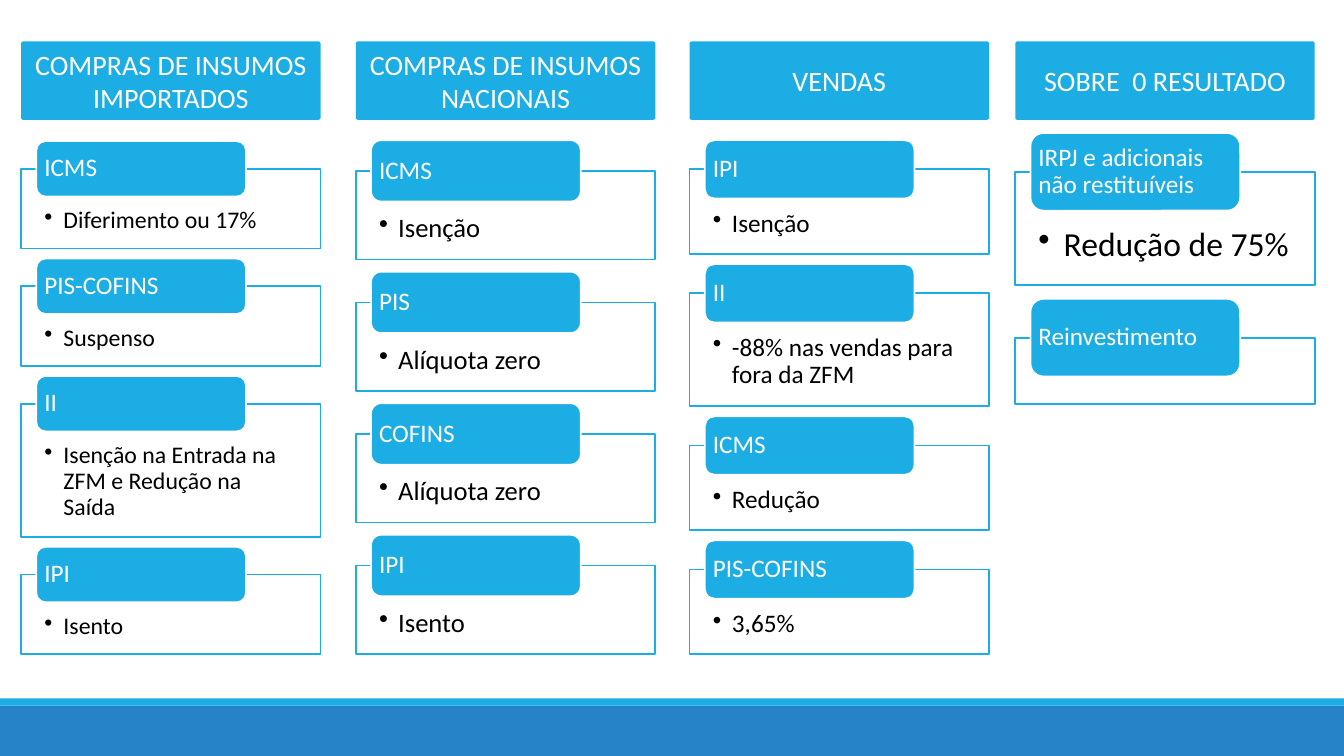
import pptx
import pptx.dml.color
import pptx.enum.shapes
import pptx.enum.text
import pptx.oxml.ns
import pptx.util
from lxml import etree

Inches = pptx.util.Inches
Pt = pptx.util.Pt
RGBColor = pptx.dml.color.RGBColor
MSO_SHAPE = pptx.enum.shapes.MSO_SHAPE
MSO_ANCHOR = pptx.enum.text.MSO_ANCHOR
PP_ALIGN = pptx.enum.text.PP_ALIGN
qn = pptx.oxml.ns.qn

SKY = RGBColor(0x1C, 0xAD, 0xE4)
BLUE = RGBColor(0x26, 0x83, 0xC6)
WHITE = RGBColor(0xFF, 0xFF, 0xFF)
BLACK = RGBColor(0, 0, 0)

FONT = "Calibri"
COLUMN_WIDTH = 2.97
TAB_WIDTH = 2.08
TAB_OFFSET = 0.15

# Each tax: tab label, box height, bullet text
COLUMNS = [
    dict(title="COMPRAS DE INSUMOS IMPORTADOS", left=0.21, top=1.4,
         tab_height=0.55, gap=0.1, size=17, indent=0.19,
         taxes=[("ICMS", 0.79, "Diferimento ou 17%"),
                ("PIS-COFINS", 0.79, "Suspenso"),
                ("II", 1.32, "Isenção na Entrada na ZFM e Redução na Saída"),
                ("IPI", 0.79, "Isento")]),
    dict(title="COMPRAS DE INSUMOS NACIONAIS", left=3.53, top=1.39,
         tab_height=0.61, gap=0.12, size=19, indent=0.19,
         taxes=[("ICMS", 0.88, "Isenção"),
                ("PIS", 0.88, "Alíquota zero"),
                ("COFINS", 0.88, "Alíquota zero"),
                ("IPI", 0.88, "Isento")]),
    dict(title="VENDAS", left=6.84, top=1.39,
         tab_height=0.58, gap=0.1, size=18, indent=0.19,
         taxes=[("IPI", 0.84, "Isenção"),
                ("II", 1.12, "-88% nas vendas para fora da ZFM"),
                ("ICMS", 0.84, "Redução"),
                ("PIS-COFINS", 0.84, "3,65%")]),
    dict(title="SOBRE  0 RESULTADO", left=10.07, top=1.32,
         tab_height=0.77, gap=0.14, size=24, indent=0.25,
         taxes=[("IRPJ e adicionais não restituíveis", 1.12, "Redução de 75%"),
                ("Reinvestimento", 0.66, "")]),
]


def add_block(shapes, kind, left, top, width, height, fill, line=None):
    shape = shapes.add_shape(kind, Inches(left), Inches(top), Inches(width), Inches(height))
    shape.shadow.inherit = False
    shape.fill.solid()
    shape.fill.fore_color.rgb = fill
    if line is None:
        shape.line.fill.background()
    else:
        shape.line.color.rgb = line
        shape.line.width = Pt(1.25)
    return shape


def write_text(shape, text, size, color, alignment, anchor, insets):
    frame = shape.text_frame
    frame.word_wrap = True
    frame.vertical_anchor = anchor
    (frame.margin_left, frame.margin_top,
     frame.margin_right, frame.margin_bottom) = [Inches(inset) for inset in insets]
    paragraph = frame.paragraphs[0]
    paragraph.alignment = alignment
    run = paragraph.add_run()
    run.text = text
    run.font.name = FONT
    run.font.size = Pt(size)
    run.font.color.rgb = color
    return paragraph


def add_bullet(paragraph, indent):
    properties = paragraph._p.get_or_add_pPr()
    properties.set("marL", str(Inches(indent)))
    properties.set("indent", str(-Inches(indent)))
    etree.SubElement(properties, qn("a:buChar")).set("char", "•")


def add_header(shapes, title, left):
    header = add_block(shapes, MSO_SHAPE.ROUNDED_RECTANGLE, left, 0.41, COLUMN_WIDTH, 0.78, SKY)
    header.adjustments[0] = 0.03
    write_text(header, title, 20, WHITE, PP_ALIGN.CENTER, MSO_ANCHOR.MIDDLE,
               (0.1, 0.05, 0.1, 0.05))


def add_box(shapes, column, top, height, text):
    box = add_block(shapes, MSO_SHAPE.RECTANGLE, column["left"], top, COLUMN_WIDTH, height,
                    WHITE, SKY)
    color = box.fill._xPr.find(qn("a:solidFill"))[0]
    etree.SubElement(color, qn("a:alpha")).set("val", "90000")
    if text:
        inset_top = 0.71 * column["tab_height"]
        paragraph = write_text(box, text, column["size"], BLACK, PP_ALIGN.LEFT, MSO_ANCHOR.TOP,
                               (0.23, inset_top, 0.23, inset_top / 3))
        paragraph.line_spacing = 0.9
        add_bullet(paragraph, column["indent"])


def add_tab(shapes, column, top, label):
    height = column["tab_height"]
    tab = add_block(shapes, MSO_SHAPE.ROUNDED_RECTANGLE, column["left"] + TAB_OFFSET, top,
                    TAB_WIDTH, height, SKY, WHITE)
    # The rounded corners already push the text inwards
    side = 0.08 - 0.05 * height
    paragraph = write_text(tab, label, 18, WHITE, PP_ALIGN.LEFT, MSO_ANCHOR.MIDDLE,
                           (side, 0, side, 0))
    paragraph.line_spacing = 0.9


def add_column(slide, column):
    shapes = slide.shapes.add_group_shape().shapes
    tab_top = column["top"]
    for label, box_height, text in column["taxes"]:
        box_top = tab_top + column["tab_height"] / 2
        add_box(shapes, column, box_top, box_height, text)
        add_tab(shapes, column, tab_top, label)
        tab_top = box_top + box_height + column["gap"]
    add_header(slide.shapes, column["title"], column["left"])


def main():
    presentation = pptx.Presentation()
    presentation.slide_width = Inches(13.33)
    presentation.slide_height = Inches(7.5)
    slide = presentation.slides.add_slide(presentation.slide_layouts[6])

    # Footer bands
    add_block(slide.shapes, MSO_SHAPE.RECTANGLE, 0, 7, 13.33, 0.5, BLUE)
    add_block(slide.shapes, MSO_SHAPE.RECTANGLE, 0, 6.93, 13.33, 0.07, SKY)

    # Tax columns
    for column in COLUMNS:
        add_column(slide, column)

    presentation.save("out.pptx")


if __name__ == "__main__":
    main()
